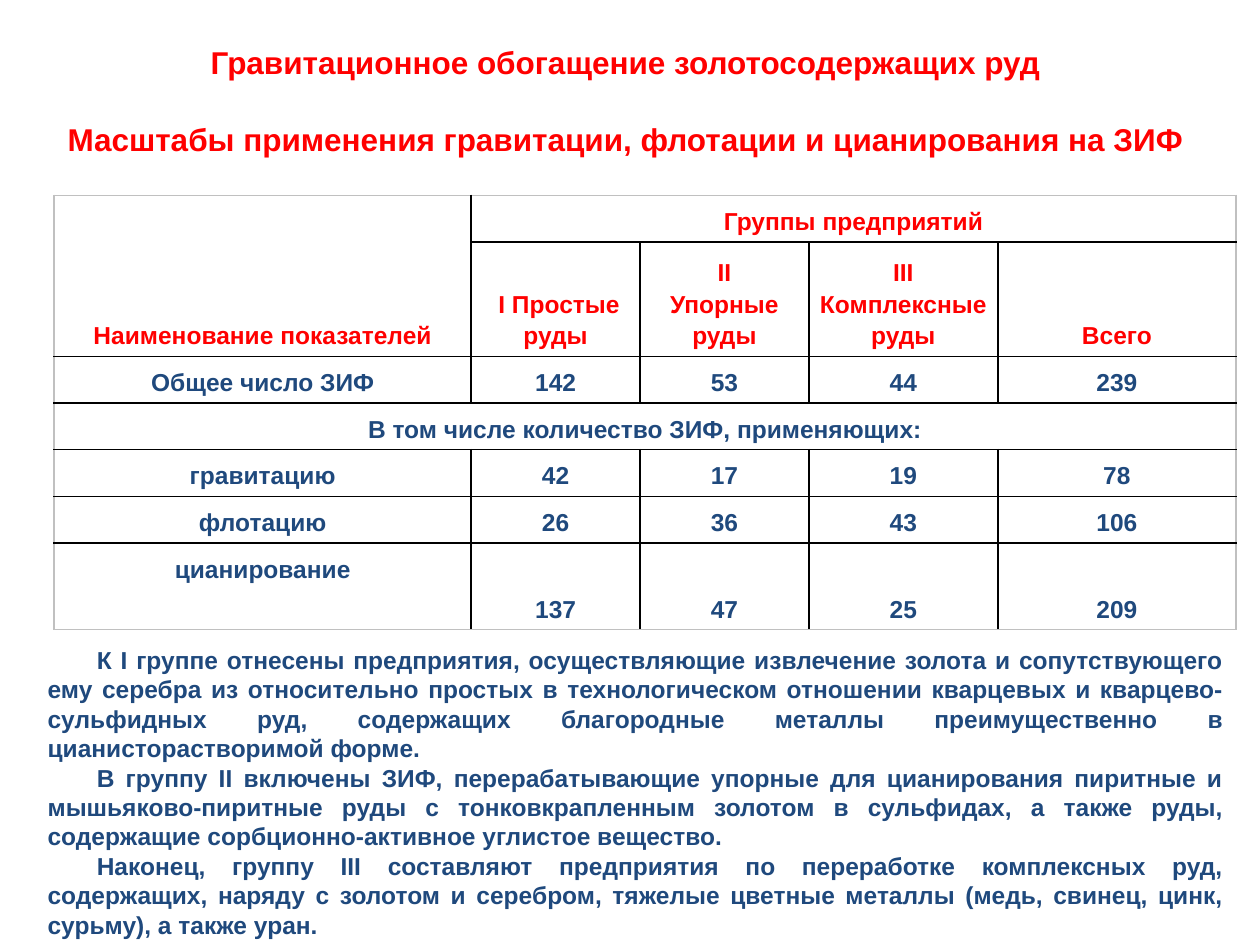
from dataclasses import dataclass

from lxml import etree
from pptx import Presentation
from pptx.dml.color import RGBColor
from pptx.enum.text import MSO_ANCHOR, PP_ALIGN
from pptx.oxml.ns import qn
from pptx.util import Inches, Pt

CENTER, JUSTIFY = PP_ALIGN.CENTER, PP_ALIGN.JUSTIFY
TOP, BOTTOM = MSO_ANCHOR.TOP, MSO_ANCHOR.BOTTOM


@dataclass(frozen=True)
class Theme:
    font: str = "Arial"
    title_size: float = 18
    body_size: float = 14
    red: str = "FF0000"
    navy: str = "1F497D"
    grid: str = "000000"
    frame: str = "C0C0C0"


@dataclass(frozen=True)
class TextBlock:
    left: float
    top: float
    width: float
    height: float
    paragraphs: tuple[str, ...]
    size: float
    color: str
    align: PP_ALIGN
    indent: float = 0
    gap: float = 0


THEME = Theme()

TITLE = TextBlock(
    0.28, 0.29, 9.37, 1.01,
    (
        "Гравитационное обогащение золотосодержащих руд",
        "Масштабы применения гравитации, флотации и цианирования на ЗИФ",
    ),
    THEME.title_size, THEME.red, CENTER, gap=22.7,
)
GROUP_NOTES = TextBlock(
    0.28, 5.07, 9.53, 2.46,
    (
        "К I группе отнесены предприятия, осуществляющие извлечение золота и "
        "сопутствующего ему серебра из относительно простых в технологическом "
        "отношении кварцевых и кварцево-сульфидных руд, содержащих благородные "
        "металлы преимущественно в цианисторастворимой форме.",
        "В группу II включены ЗИФ, перерабатывающие упорные для цианирования "
        "пиритные и мышьяково-пиритные руды с тонковкрапленным золотом в "
        "сульфидах, а также руды, содержащие сорбционно-активное углистое вещество.",
        "Наконец, группу III составляют предприятия по переработке комплексных "
        "руд, содержащих, наряду с золотом и серебром, тяжелые цветные металлы "
        "(медь, свинец, цинк, сурьму), а также уран.",
    ),
    THEME.body_size, THEME.navy, JUSTIFY, indent=0.39,
)

COLUMN_WIDTHS = (3.31, 1.34, 1.34, 1.5, 1.89)
ROW_HEIGHTS = (0.37, 0.91, 0.37, 0.37, 0.37, 0.37, 0.69)
HEADER_ROWS = 2
PLANT_COUNTS = (
    ("Наименование показателей", "Группы предприятий", "", "", ""),
    ("", " I Простые руды", "II\nУпорные руды", "III\nКомплексные руды", "Всего"),
    ("Общее число ЗИФ", "142", "53", "44", "239"),
    ("В том числе количество ЗИФ, применяющих:", "", "", "", ""),
    ("гравитацию", "42", "17", "19", "78"),
    ("флотацию", "26", "36", "43", "106"),
    ("цианирование", "137", "47", "25", "209"),
)
MERGES = (((0, 0), (1, 0)), ((0, 1), (0, 4)), ((3, 0), (3, 4)))


def add_bold_text(paragraph, text: str, size: float, color: str) -> None:
    for number, line in enumerate(text.split("\n")):
        if number:
            paragraph.add_line_break()
        run = paragraph.add_run()
        run.text = line
        run.font.name = THEME.font
        run.font.size = Pt(size)
        run.font.bold = True
        run.font.color.rgb = RGBColor.from_string(color)


def add_text_block(slide, block: TextBlock) -> None:
    box = slide.shapes.add_textbox(
        Inches(block.left), Inches(block.top), Inches(block.width), Inches(block.height)
    )
    frame = box.text_frame
    frame.word_wrap = True
    for number, text in enumerate(block.paragraphs):
        paragraph = frame.add_paragraph() if number else frame.paragraphs[0]
        paragraph.alignment = block.align
        if number:
            paragraph.space_before = Pt(block.gap)
        if block.indent:
            properties = paragraph._p.get_or_add_pPr()
            properties.set("marL", "0")
            properties.set("indent", str(Inches(block.indent)))
        add_bold_text(paragraph, text, block.size, block.color)


def draw_borders(cell, row: int, column: int) -> None:
    """Grey on the table's outer edge, black between cells."""
    outer_edges = {
        "a:lnL": column == 0,
        "a:lnR": column + cell.span_width == len(COLUMN_WIDTHS),
        "a:lnT": row == 0,
        "a:lnB": row + cell.span_height == len(ROW_HEIGHTS),
    }
    properties = cell._tc.get_or_add_tcPr()
    for tag, is_outer in outer_edges.items():
        line = etree.SubElement(properties, qn(tag), w=str(Pt(1)))
        fill = etree.SubElement(line, qn("a:solidFill"))
        color = THEME.frame if is_outer else THEME.grid
        etree.SubElement(fill, qn("a:srgbClr"), val=color)


def fill_cell(cell, text: str, color: str) -> None:
    cell.margin_left = cell.margin_right = Inches(0.05)
    cell.margin_top = cell.margin_bottom = Inches(0.05)
    cell.vertical_anchor = BOTTOM
    cell.fill.background()
    paragraph = cell.text_frame.paragraphs[0]
    paragraph.alignment = CENTER
    paragraph.line_spacing = 1.15
    add_bold_text(paragraph, text, THEME.body_size, color)


def add_plant_table(slide) -> None:
    table = slide.shapes.add_table(
        len(ROW_HEIGHTS), len(COLUMN_WIDTHS), Inches(0.43), Inches(1.55),
        Inches(sum(COLUMN_WIDTHS)), Inches(sum(ROW_HEIGHTS)),
    ).table
    table.first_row = table.horz_banding = False
    for column, width in zip(table.columns, COLUMN_WIDTHS):
        column.width = Inches(width)
    for row, height in zip(table.rows, ROW_HEIGHTS):
        row.height = Inches(height)
    for first, last in MERGES:
        table.cell(*first).merge(table.cell(*last))
    for r, texts in enumerate(PLANT_COUNTS):
        for c, text in enumerate(texts):
            cell = table.cell(r, c)
            if cell.is_spanned:
                cell.fill.background()
                continue
            # An unmerged cell spans one row and one column.
            draw_borders(cell, r, c)
            fill_cell(cell, text, THEME.red if r < HEADER_ROWS else THEME.navy)
    cyanidation = table.cell(len(ROW_HEIGHTS) - 1, 0)
    cyanidation.vertical_anchor = TOP
    cyanidation.margin_top = Inches(0.07)


def main() -> None:
    presentation = Presentation()
    presentation.slide_width = Inches(10)
    presentation.slide_height = Inches(7.5)
    slide = presentation.slides.add_slide(presentation.slide_layouts[6])
    add_text_block(slide, TITLE)
    add_plant_table(slide)
    add_text_block(slide, GROUP_NOTES)
    presentation.save("out.pptx")


if __name__ == "__main__":
    main()
